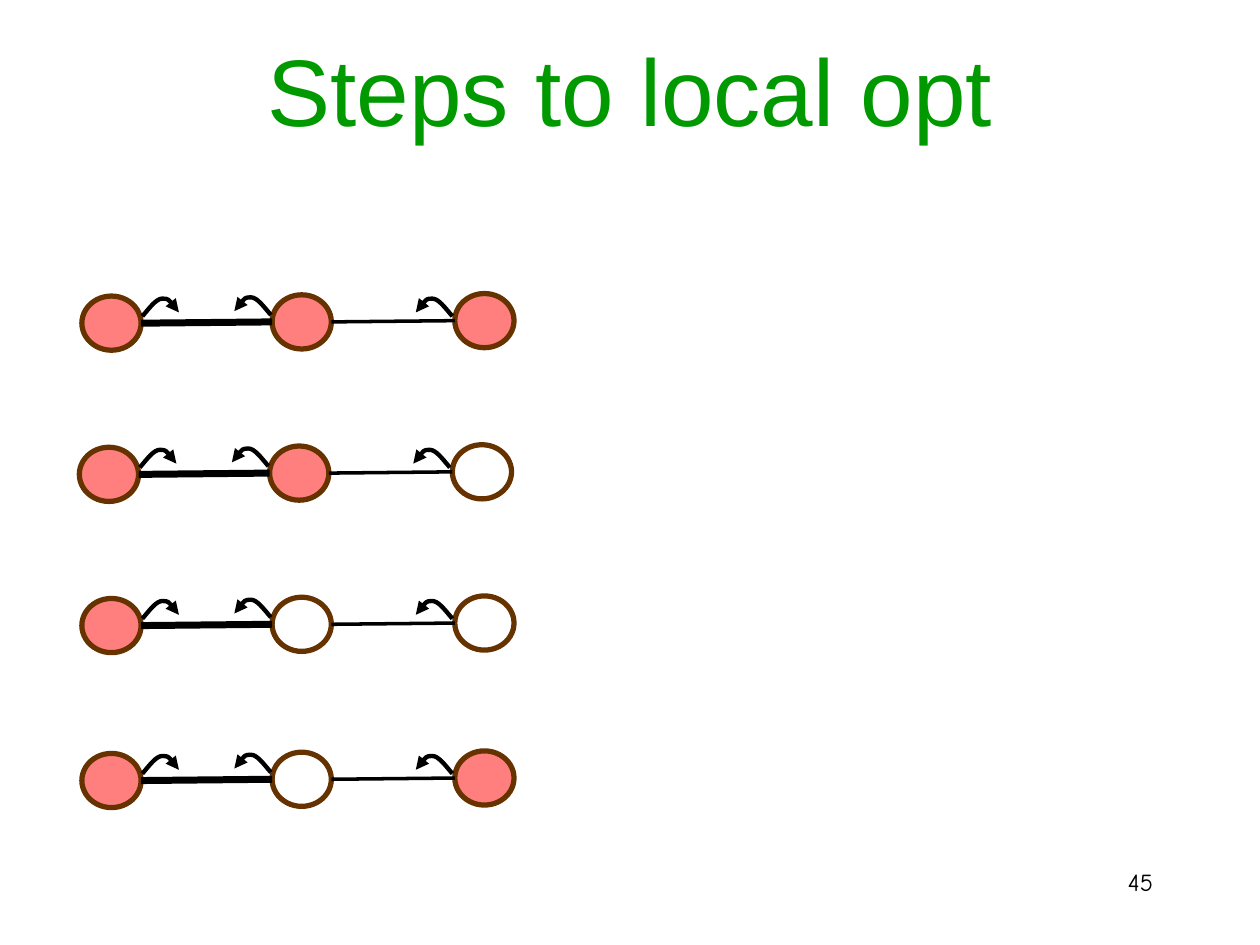
from dataclasses import dataclass

from pptx import Presentation
from pptx.dml.color import RGBColor
from pptx.enum.shapes import MSO_CONNECTOR, MSO_SHAPE
from pptx.enum.text import MSO_ANCHOR, MSO_AUTO_SIZE, PP_ALIGN
from pptx.oxml.ns import qn
from pptx.util import Inches, Pt
from lxml.etree import SubElement


@dataclass(frozen=True)
class Theme:
    title: RGBColor = RGBColor(0x00, 0x99, 0x00)
    ink: RGBColor = RGBColor(0x00, 0x00, 0x00)
    node: RGBColor = RGBColor(0xFF, 0x00, 0x00)
    ring: RGBColor = RGBColor(0x66, 0x33, 0x00)
    title_font: str = "Arial"
    number_font: str = "Comic Neue"
    title_size: int = 54
    number_size: int = 14
    ring_width: float = 3
    arrow_width: float = 2.5


THEME = Theme()
NODE_W, NODE_H = 0.47, 0.43
NODES = [(2.96, 0), (0, 0.02), (1.51, 0.01)]
EDGES = [(1, 2, 4), (2, 0, 2)]
ARROWS = [(2.94, 0.18, -1), (1.5, 0.17, -1), (0.48, 0.18, 1)]
HOOK = [
    (0.06, -0.07), (0.11, -0.14), (0.16, -0.14),
    (0.21, -0.14), (0.25, -0.09), (0.29, -0.03),
]
STATES = [
    (0.65, 2.33, (True, True, True)),
    (0.63, 3.53, (False, True, True)),
    (0.65, 4.73, (False, True, False)),
    (0.65, 5.96, (True, True, False)),
]


def format_text(tf, font, size, color, align):
    p = tf.paragraphs[0]
    p.alignment = align
    r = p.runs[0]
    r.font.name = font
    r.font.size = Pt(size)
    r.font.color.rgb = color


def add_title(s, text):
    sp = s.shapes.title
    sp.left, sp.top, sp.width, sp.height = map(Inches, (0, 0.2, 10, 1.01))
    tf = sp.text_frame
    tf.text = text
    tf.vertical_anchor = MSO_ANCHOR.MIDDLE
    tf.auto_size = MSO_AUTO_SIZE.SHAPE_TO_FIT_TEXT
    format_text(tf, THEME.title_font, THEME.title_size, THEME.title, PP_ALIGN.CENTER)


def add_number(s, text):
    tf = s.shapes.add_textbox(*map(Inches, (7.17, 6.83, 2.08, 0.5))).text_frame
    tf.word_wrap = True
    tf.text = text
    format_text(tf, THEME.number_font, THEME.number_size, THEME.ink, PP_ALIGN.RIGHT)


def set_line(sp, color, width):
    sp.line.color.rgb = color
    sp.line.width = Pt(width)


def add_node(shapes, x, y, filled):
    sp = shapes.add_shape(MSO_SHAPE.OVAL, *map(Inches, (x, y, NODE_W, NODE_H)))
    sp.shadow.inherit = False
    set_line(sp, THEME.ring, THEME.ring_width)
    if filled:
        sp.fill.solid()
        sp.fill.fore_color.rgb = THEME.node
        color = sp._element.spPr.find(qn("a:solidFill"))[0]
        SubElement(color, qn("a:alpha"), val="50000")
    else:
        sp.fill.background()


def add_edge(shapes, x1, y1, x2, y2, width):
    sp = shapes.add_connector(MSO_CONNECTOR.STRAIGHT, *map(Inches, (x1, y1, x2, y2)))
    set_line(sp, THEME.ink, width)
    SubElement(sp._element.spPr, qn("a:effectLst"))


def curve_segments(sp):
    segments = list(sp._element.iter(qn("a:lnTo")))
    outline = segments[0].getparent()
    for i in range(0, len(segments), 3):
        curve = SubElement(outline, qn("a:cubicBezTo"))
        for segment in segments[i:i + 3]:
            curve.append(segment[0])
            outline.remove(segment)


def add_arrow(shapes, x, y, direction):
    points = [(Inches(x + direction * dx), Inches(y + dy)) for dx, dy in HOOK]
    builder = shapes.build_freeform(Inches(x), Inches(y))
    builder.add_line_segments(points, close=False)
    sp = builder.convert_to_shape()
    curve_segments(sp)
    sp.shadow.inherit = False
    sp.fill.background()
    set_line(sp, THEME.ink, THEME.arrow_width)
    SubElement(sp.line._get_or_add_ln(), qn("a:tailEnd"), type="triangle")


def add_state(shapes, x, y, filled):
    for (dx, dy), on in zip(NODES, filled):
        add_node(shapes, x + dx, y + dy, on)
    for a, b, width in EDGES:
        (ax, ay), (bx, by) = NODES[a], NODES[b]
        mid = y + NODE_H / 2
        add_edge(shapes, x + ax + NODE_W, mid + ay, x + bx, mid + by, width)
    for dx, dy, direction in ARROWS:
        add_arrow(shapes, x + dx, y + dy, direction)


def main():
    prs = Presentation()
    prs.slide_width, prs.slide_height = Inches(10), Inches(7.5)
    s = prs.slides.add_slide(prs.slide_layouts[5])
    add_title(s, "Steps to local opt")
    add_number(s, "45")
    for i, state in enumerate(STATES):
        shapes = s.shapes.add_group_shape().shapes if i else s.shapes
        add_state(shapes, *state)
    prs.save("out.pptx")


if __name__ == "__main__":
    main()
